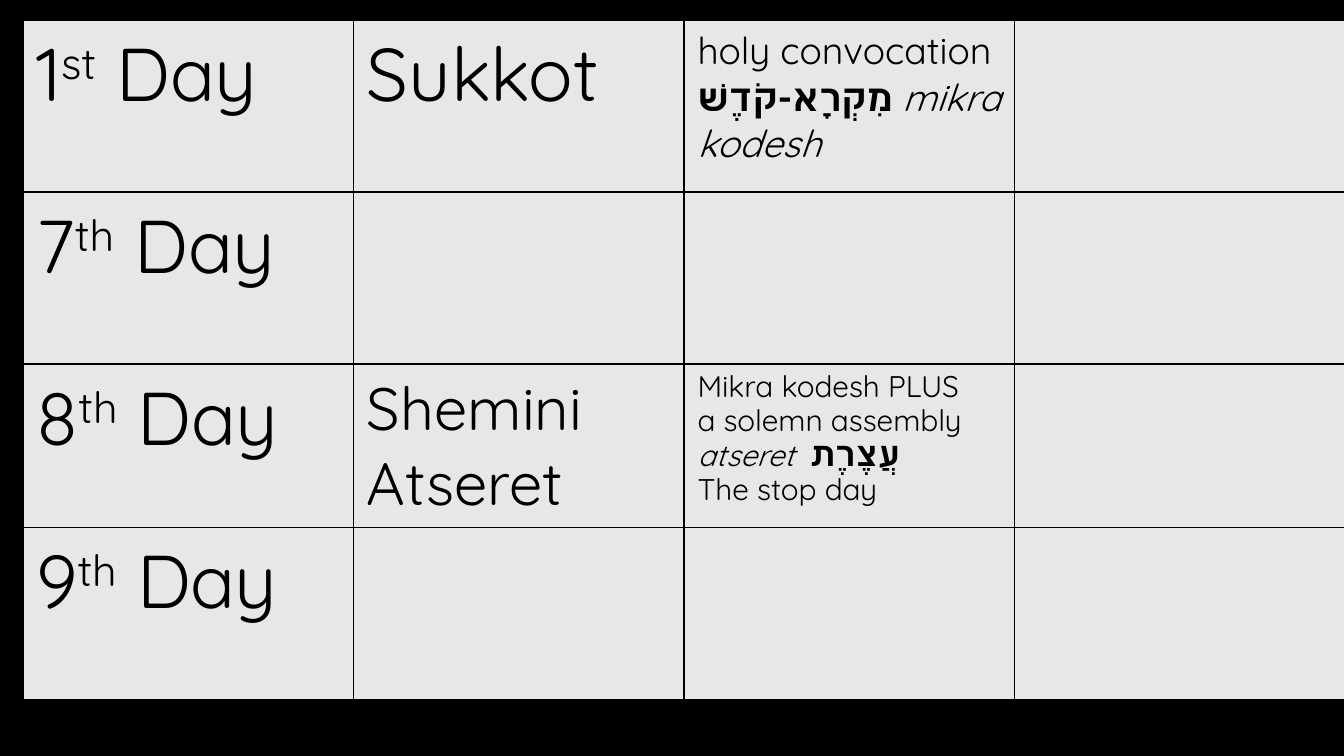
from lxml.etree import SubElement
from pptx import Presentation
from pptx.dml.color import RGBColor
from pptx.enum.text import PP_ALIGN
from pptx.oxml.ns import qn
from pptx.util import Inches, Pt

COLORS = {"background": "000000", "cell": "E7E7E7", "text": "000000", "border": "000000"}
LATIN_FONT = "Quicksand"
HEBREW_FONT = "Roboto"


class SlideBuilder:
    def __init__(self, slide):
        self.slide = slide

    def color(self, name):
        return RGBColor.from_string(COLORS[name])

    def background(self):
        fill = self.slide.background.fill
        fill.solid()
        fill.fore_color.rgb = self.color("background")

    def table(self, left, top, column_width, row_heights, contents):
        columns = len(contents[0])
        frame = self.slide.shapes.add_table(
            len(contents), columns, Inches(left), Inches(top),
            Inches(column_width * columns), Inches(sum(row_heights)))
        table = frame.table
        table.first_row = table.horz_banding = False
        for column in table.columns:
            column.width = Inches(column_width)
        for row, height in zip(table.rows, row_heights):
            row.height = Inches(height)
        for row, row_contents in zip(table.rows, contents):
            for cell, paragraphs in zip(row.cells, row_contents):
                self.cell(cell, paragraphs)

    def cell(self, cell, paragraphs):
        self.borders(cell)
        cell.fill.solid()
        cell.fill.fore_color.rgb = self.color("cell")
        for index, content in enumerate(paragraphs):
            frame = cell.text_frame
            paragraph = frame.add_paragraph() if index else frame.paragraphs[0]
            paragraph.alignment = PP_ALIGN.LEFT
            if content.get("spacing"):
                paragraph.line_spacing = content["spacing"]
            if content.get("rtl"):
                paragraph._p.get_or_add_pPr().set("rtl", "1")
            for run in content["runs"]:
                self.run(paragraph, **run)

    def borders(self, cell):
        properties = cell._tc.get_or_add_tcPr()
        for side in ("a:lnL", "a:lnR", "a:lnT", "a:lnB"):
            line = SubElement(properties, qn(side), w=str(Pt(1)))
            fill = SubElement(line, qn("a:solidFill"))
            SubElement(fill, qn("a:srgbClr"), val=COLORS["border"])

    def run(self, paragraph, text, size, italic=False, hebrew=False, raised=False):
        run = paragraph.add_run()
        run.text = text
        font = run.font
        font.name = HEBREW_FONT if hebrew else LATIN_FONT
        font.size = Pt(size)
        font.bold = hebrew
        font.italic = italic
        font.color.rgb = self.color("text")
        properties = run._r.get_or_add_rPr()
        if hebrew:
            SubElement(properties, qn("a:cs"), typeface=HEBREW_FONT)
        if raised:
            properties.set("baseline", "30000")


def line(*runs, **options):
    return {"runs": runs, **options}


def run(text, size, **options):
    return {"text": text, "size": size, **options}


def day(number, suffix):
    return [line(run(number, 40), run(suffix, 40, raised=True), run(" Day", 40))]


def main():
    # Widescreen slide, 16 to 9
    presentation = Presentation()
    presentation.slide_width = Inches(10)
    presentation.slide_height = Inches(10 * 9 / 16)
    builder = SlideBuilder(presentation.slides.add_slide(presentation.slide_layouts[6]))
    builder.background()

    # Descriptions of the holy days
    convocation = [line(
        run("holy convocation ", 20),
        run("מִקְרָא-קֹדֶשׁ ", 20, hebrew=True),
        run("mikra kodesh ", 20, italic=True))]
    assembly = [
        line(run("Mikra kodesh PLUS", 16), spacing=0.9),
        line(run("a solemn assembly", 16), spacing=0.9),
        line(run("עֲצֶרֶת ", 18, hebrew=True), run(" ", 16),
             run("atseret", 16, italic=True), spacing=0.9, rtl=True),
        line(run("The stop day", 16), spacing=0.9),
    ]

    # Table of festival days
    empty = []
    builder.table(0.17, 0.15, 2.46, [1.28, 1.28, 1.01, 1.28], [
        [day("1", "st"), [line(run("Sukkot", 40))], convocation, empty],
        [day("7", "th"), empty, empty, empty],
        [day("8", "th"), [line(run("Shemini Atseret", 32))], assembly, empty],
        [day("9", "th"), empty, empty, empty],
    ])

    presentation.save("out.pptx")


if __name__ == "__main__":
    main()
